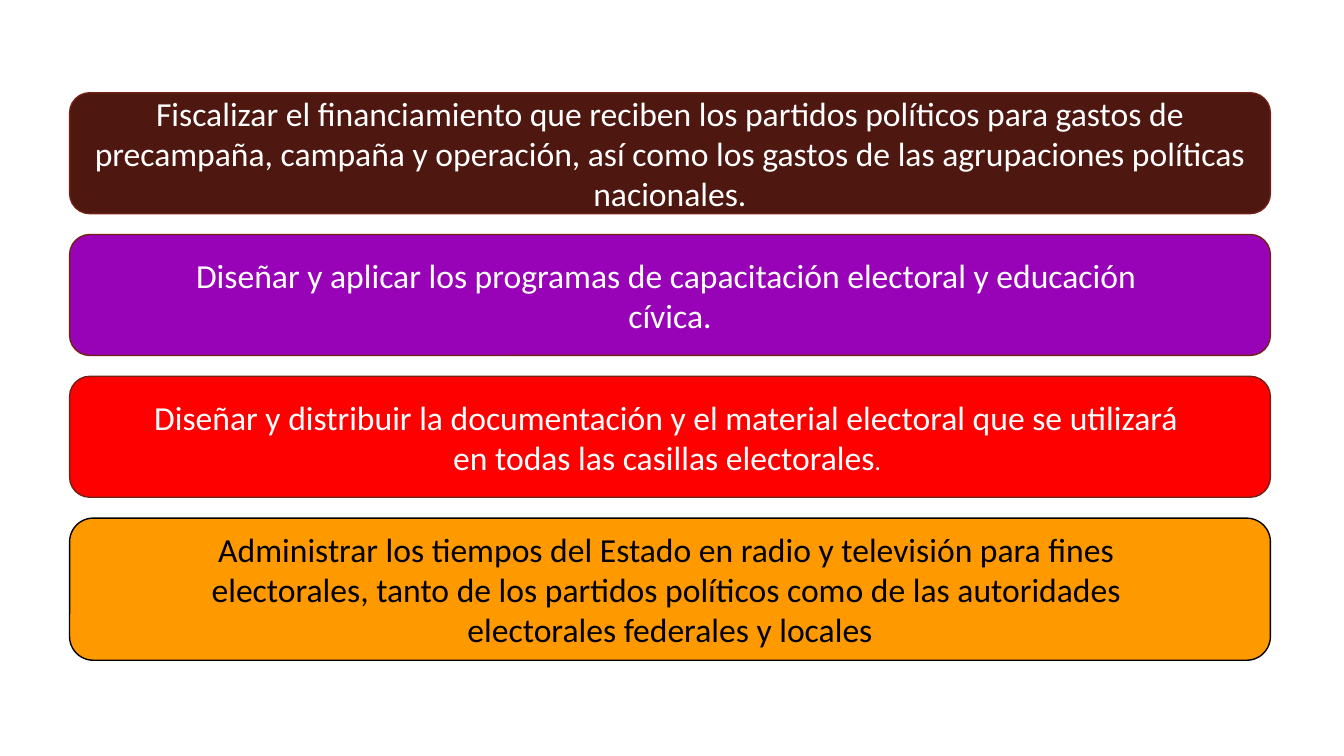
import pptx
import pptx.util
import pptx.dml.color
import pptx.enum.shapes
import pptx.enum.text
from pptx.util import Inches, Pt

RGBColor = pptx.dml.color.RGBColor
WHITE = RGBColor(0xFF, 0xFF, 0xFF)
BLACK = RGBColor(0x00, 0x00, 0x00)
MAROON = RGBColor(0x4E, 0x17, 0x10)
RUST = RGBColor(0x73, 0x21, 0x17)
PURPLE = RGBColor(0x99, 0x03, 0xB7)
RED = RGBColor(0xFF, 0x00, 0x00)
ORANGE = RGBColor(0xFF, 0x99, 0x00)

# Content: fill, outline, text colour, height, paragraphs of (text, size) spans
DUTIES = [
    (MAROON, RUST, WHITE, 1.2, [
        [("Fiscalizar el financiamiento que reciben los partidos políticos para "
          "gastos de precampaña, campaña y operación, así como los gastos de las "
          "agrupaciones políticas nacionales.", 24)],
    ]),
    (PURPLE, RUST, WHITE, 1.2, [
        [("Diseñar y aplicar los programas de capacitación electoral y educación ", 24)],
        [("cívica.", 24)],
    ]),
    (RED, RUST, WHITE, 1.2, [
        [("Diseñar y distribuir la documentación y el material electoral que se utilizará ", 24)],
        [("en todas las casillas electorales", 24), (". ", 18)],
    ]),
    (ORANGE, BLACK, BLACK, 1.41, [
        [("Administrar los tiempos del Estado en radio y televisión para fines ", 24)],
        [("electorales, tanto de los partidos políticos como de las autoridades ", 24)],
        [("electorales federales y locales", 24)],
    ]),
]

# Layout: equal steps between the first and last box
LEFT, WIDTH = 0.69, 11.91
FIRST_TOP, LAST_TOP = 0.92, 5.14
STEP = (LAST_TOP - FIRST_TOP) / (len(DUTIES) - 1)

deck = pptx.Presentation()
deck.slide_width, deck.slide_height = Inches(13.33), Inches(7.5)
page = deck.slides.add_slide(deck.slide_layouts[6])

for index, (fill, outline, ink, height, paragraphs) in enumerate(DUTIES):
    # Rounded box
    box = page.shapes.add_shape(
        pptx.enum.shapes.MSO_SHAPE.ROUNDED_RECTANGLE,
        Inches(LEFT), Inches(FIRST_TOP + index * STEP), Inches(WIDTH), Inches(height))
    box.shadow.inherit = False
    box.fill.solid()
    box.fill.fore_color.rgb = fill
    box.line.color.rgb = outline
    box.line.width = Pt(1)

    # Centred text
    frame = box.text_frame
    frame.word_wrap = True
    frame.vertical_anchor = pptx.enum.text.MSO_ANCHOR.MIDDLE
    for number, spans in enumerate(paragraphs):
        para = frame.add_paragraph() if number else frame.paragraphs[0]
        para.alignment = pptx.enum.text.PP_ALIGN.CENTER
        for text, size in spans:
            span = para.add_run()
            span.text = text
            span.font.name = "Calibri"
            span.font.size = Pt(size)
            span.font.color.rgb = ink

deck.save("out.pptx")
